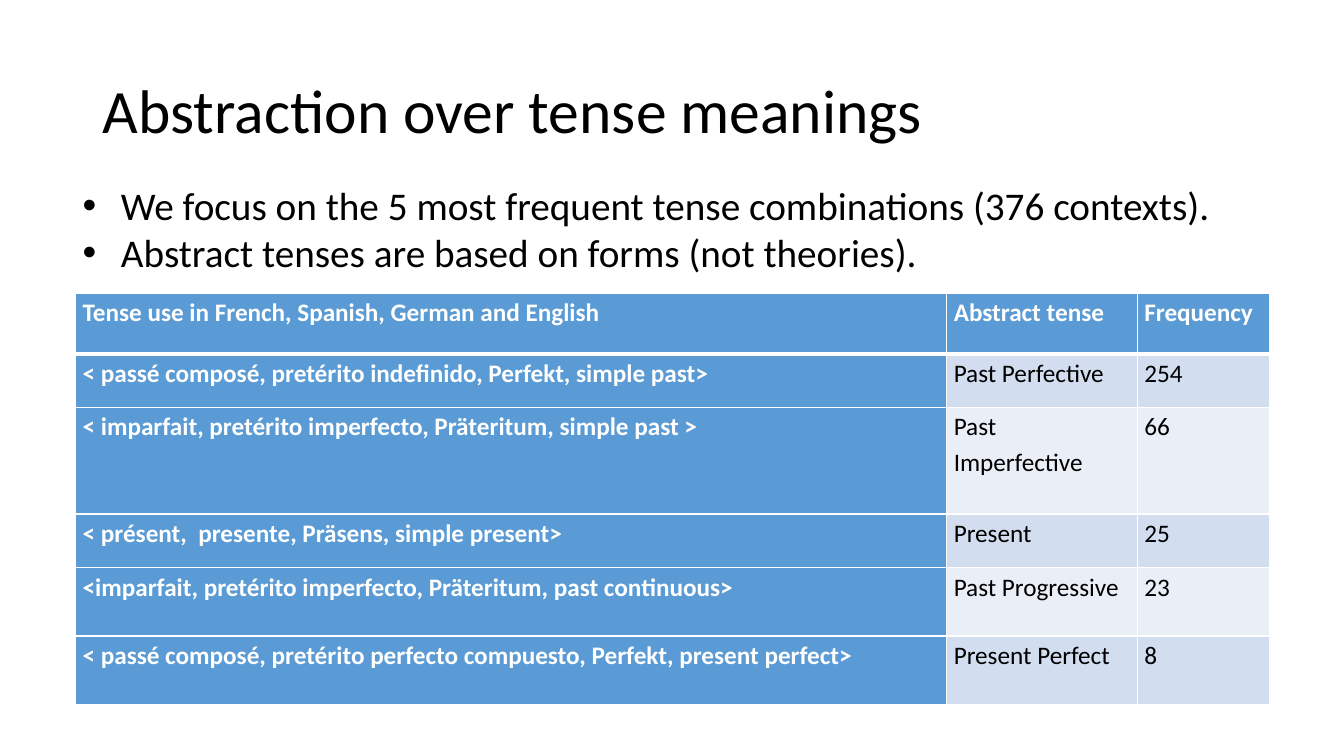
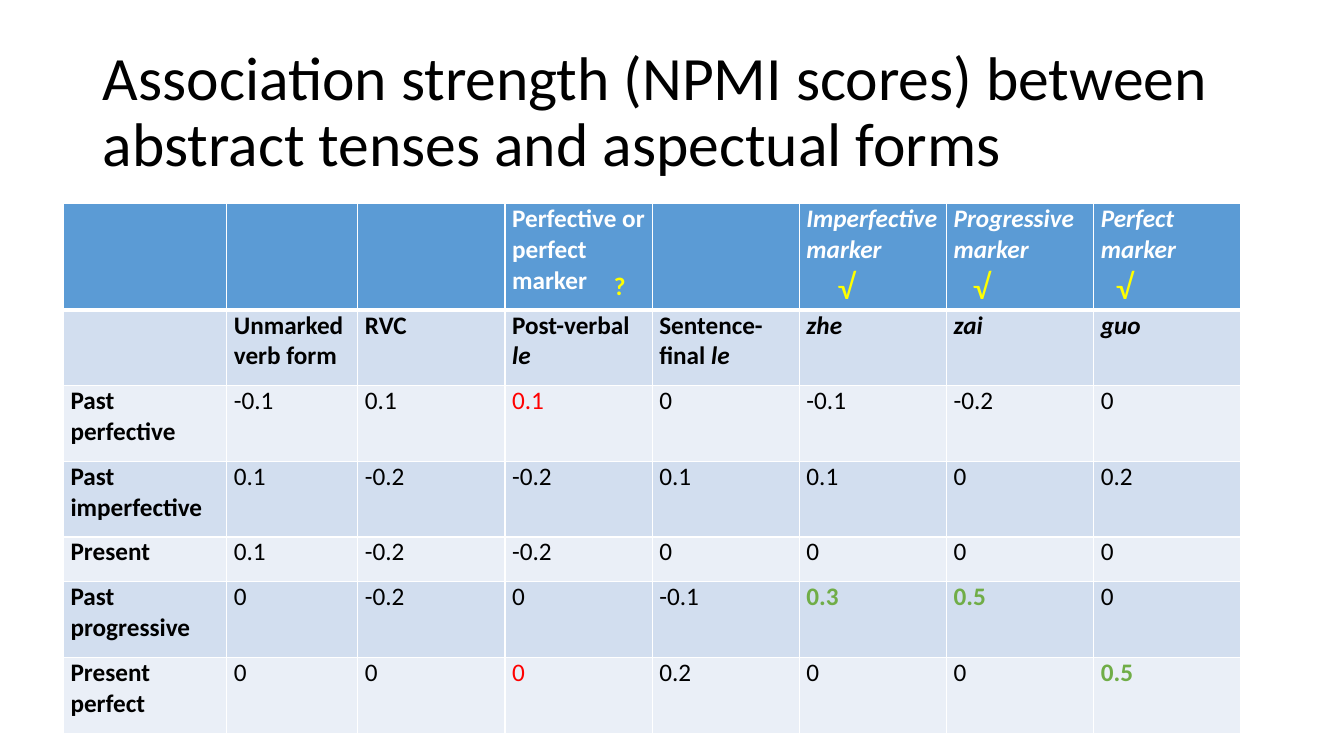
from lxml.etree import SubElement
from pptx import Presentation
from pptx.dml.color import RGBColor
from pptx.enum.text import MSO_ANCHOR, MSO_AUTO_SIZE, PP_ALIGN
from pptx.oxml.ns import qn
from pptx.util import Inches, Pt

COLORS = {
    "text": "000000",
    "white": "FFFFFF",
    "header": "5B9BD5",
    "band_dark": "D2DEEF",
    "band_light": "EAEFF7",
    "weak": "FF0000",
    "strong": "70AD47",
    "mark": "FFFF00",
}
FONT = "Calibri"
TITLE_BOX = (0.92, 0.4, 11.5, 1.45)
TITLE_AND_BODY, TITLE_ONLY = 1, 5

TENSE_ROWS = [
    ["Tense use in French, Spanish, German and English", "Abstract tense", "Frequency"],
    ["< passé composé, pretérito indefinido, Perfekt, simple past>", "Past Perfective", "254"],
    ["< imparfait, pretérito imperfecto, Präteritum, simple past >", "Past Imperfective", "66"],
    ["< présent,  presente, Präsens, simple present>", "Present", "25"],
    ["<imparfait, pretérito imperfecto, Präteritum, past continuous>", "Past Progressive", "23"],
    ["< passé composé, pretérito perfecto compuesto, Perfekt, present perfect>",
     "Present Perfect", "8"],
]

# Text between asterisks is italic
SCORE_ROWS = [
    ["", "", "", "Perfective or perfect marker", "",
     "*Imperfective marker*", "*Progressive marker*", "*Perfect marker*"],
    ["", "Unmarked verb form", "RVC", "Post-verbal *le*", "Sentence-final *le*",
     "*zhe*", "*zai*", "*guo*"],
    ["Past perfective", "-0.1", "0.1", "0.1", "0", "-0.1", "-0.2", "0"],
    ["Past imperfective", "0.1", "-0.2", "-0.2", "0.1", "0.1", "0", "0.2"],
    ["Present", "0.1", "-0.2", "-0.2", "0", "0", "0", "0"],
    ["Past progressive", "0", "-0.2", "0", "-0.1", "0.3", "0.5", "0"],
    ["Present perfect", "0", "0", "0", "0.2", "0", "0", "0.5"],
]
WEAK_SCORES = {(2, 3), (6, 3)}
STRONG_SCORES = {(5, 5), (5, 6), (6, 7)}


def rgb(name):
    return RGBColor.from_string(COLORS[name])


def style_font(font, size, color="text", bold=False):
    font.name = FONT
    font.size = Pt(size)
    font.bold = bold
    font.color.rgb = rgb(color)


def place(shape, box):
    shape.left, shape.top, shape.width, shape.height = map(Inches, box)


def add_page(deck, layout, title):
    page = deck.slides.add_slide(deck.slide_layouts[layout])
    place(page.shapes.title, TITLE_BOX)
    frame = page.shapes.title.text_frame
    frame.text = title
    frame.auto_size = MSO_AUTO_SIZE.NONE
    frame.vertical_anchor = MSO_ANCHOR.MIDDLE
    para = frame.paragraphs[0]
    para.alignment = PP_ALIGN.LEFT
    para.line_spacing = 0.9
    style_font(para.font, 44)
    return page


def add_bullets(page, box, lines):
    body = page.placeholders[1]
    place(body, box)
    frame = body.text_frame
    frame.auto_size = MSO_AUTO_SIZE.NONE
    frame.text = "\n".join(lines)
    for para in frame.paragraphs:
        para.space_before = Pt(0)
        para.line_spacing = 1.0
        style_font(para.font, 28)
        properties = para._p.get_or_add_pPr()
        properties.set("marL", str(Inches(0.38)))
        properties.set("indent", str(-Inches(0.38)))
        SubElement(properties, qn("a:buFont"), typeface="Arial")
        SubElement(properties, qn("a:buChar"), char="•")


def set_borders(cell, top, bottom):
    properties = cell._tc.get_or_add_tcPr()
    for side, width in (("L", 1), ("R", 1), ("T", top), ("B", bottom)):
        line = SubElement(properties, qn(f"a:ln{side}"), w=str(Pt(width)))
        fill = SubElement(line, qn("a:solidFill"))
        SubElement(fill, qn("a:srgbClr"), val=COLORS["white"])


def write_cell(cell, text, color, bold, line_spacing):
    para = cell.text_frame.paragraphs[0]
    para.line_spacing = line_spacing
    style_font(para.font, 18, color, bold)
    for index, piece in enumerate(text.split("*")):
        if piece:
            span = para.add_run()
            span.text = piece
            style_font(span.font, 18, color, bold)
            span.font.italic = index % 2 == 1


def add_grid(page, left, top, widths, heights, rows, cell_style,
             line_spacing=1.0, bottom_margin=0):
    """cell_style(row, column) gives fill, text colour and bold."""
    frame = page.shapes.add_table(
        len(rows), len(widths), Inches(left), Inches(top),
        Inches(sum(widths)), Inches(sum(heights)))
    table = frame.table
    for column, width in zip(table.columns, widths):
        column.width = Inches(width)
    for r, (row, height) in enumerate(zip(rows, heights)):
        table.rows[r].height = Inches(height)
        for c, text in enumerate(row):
            cell = table.cell(r, c)
            fill, color, bold = cell_style(r, c)
            cell.margin_left = cell.margin_right = Inches(0.07)
            cell.margin_top, cell.margin_bottom = 0, Inches(bottom_margin)
            set_borders(cell, 3 if r == 1 else 1, 3 if r == 0 else 1)
            cell.fill.solid()
            cell.fill.fore_color.rgb = rgb(fill)
            write_cell(cell, text, color, bold, line_spacing)


def band(row):
    return "band_dark" if row % 2 else "band_light"


def tense_style(row, column):
    if row == 0 or column == 0:
        return "header", "white", True
    return band(row), "text", False


def score_style(row, column):
    if row == 0:
        return "header", "white", True
    if (row, column) in STRONG_SCORES:
        return band(row), "strong", True
    if (row, column) in WEAK_SCORES:
        return band(row), "weak", False
    return band(row), "text", row == 1 or column == 0


def add_mark(page, box, text, size, bold=False):
    shape = page.shapes.add_textbox(*map(Inches, box))
    shape.text_frame.word_wrap = True
    para = shape.text_frame.paragraphs[0]
    para.text = text
    style_font(para.font, size, "mark", bold)


def build_tense_page(deck):
    page = add_page(deck, TITLE_AND_BODY, "Abstraction over tense meanings")
    add_grid(page, 0.75, 2.91, [8.64, 1.89, 1.31],
             [0.6, 0.53, 1.06, 0.53, 0.68, 0.68],
             TENSE_ROWS, tense_style, line_spacing=1.15)
    add_bullets(page, (0.72, 1.75, 12.58, 1.03), [
        "We focus on the 5 most frequent tense combinations (376 contexts).",
        "Abstract tenses are based on forms (not theories).",
    ])


def build_score_page(deck):
    page = add_page(
        deck, TITLE_ONLY,
        "Association strength (NPMI scores) between abstract tenses and aspectual forms")
    left, top = 0.63, 2.02
    widths = [1.62, 1.3] + [1.46] * 6
    heights = [1.05, 0.75, 0.75, 0.75, 0.44, 0.75, 0.75]
    add_grid(page, left, top, widths, heights, SCORE_ROWS, score_style,
             bottom_margin=0.14)

    # Verdict marks in the header row, offset from their column's left edge
    def column_left(column):
        return left + sum(widths[:column])

    add_mark(page, (column_left(3) + 0.98, top + 0.61, 0.97, 0.4), "?", 18, bold=True)
    for column, offset in ((5, 0.28), (6, 0.16), (7, 0.12)):
        add_mark(page, (column_left(column) + offset, top + 0.55, 0.6, 0.52), "√", 25)


def main():
    deck = Presentation()
    deck.slide_width, deck.slide_height = Inches(13.33), Inches(7.5)
    build_tense_page(deck)
    build_score_page(deck)
    deck.save("out.pptx")


if __name__ == "__main__":
    main()
